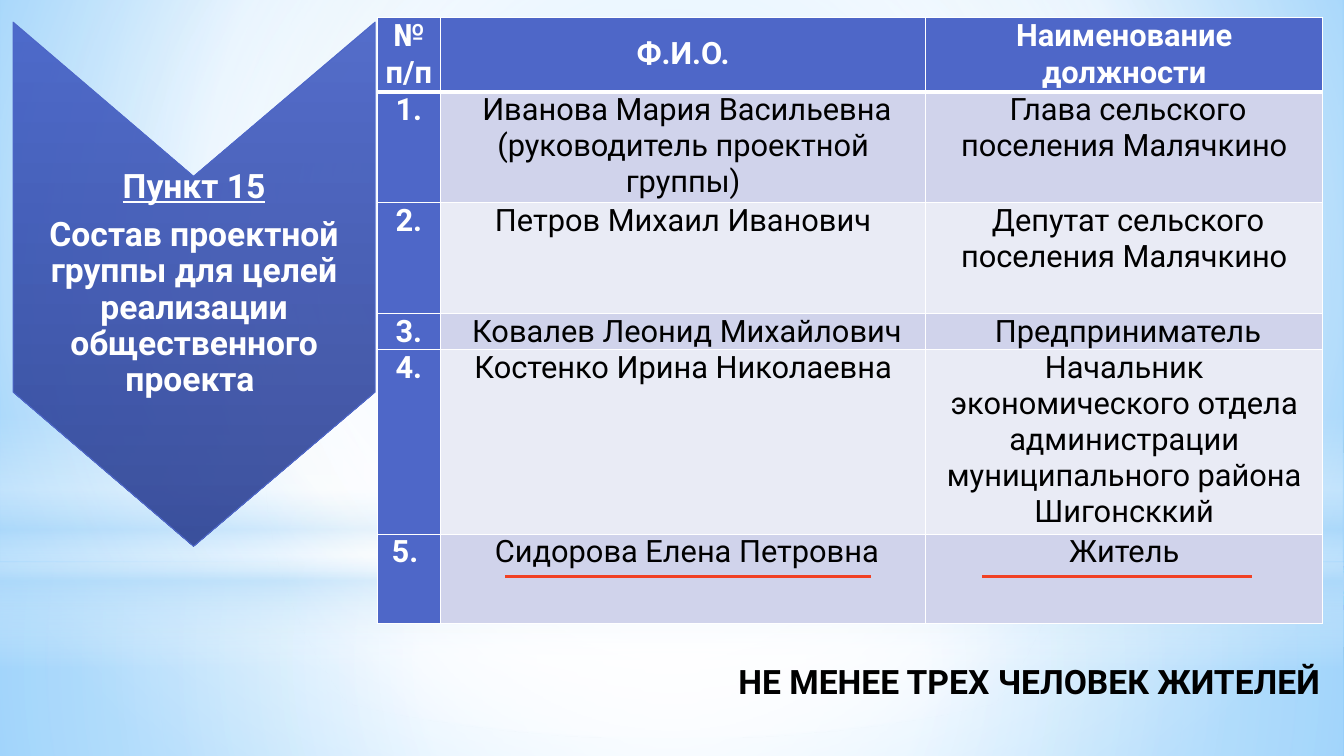
from lxml import etree
from pptx import Presentation
from pptx.dml.color import RGBColor
from pptx.enum.shapes import MSO_CONNECTOR as Connector, MSO_SHAPE as Shape
from pptx.enum.text import MSO_ANCHOR as Anchor, PP_ALIGN as Align
from pptx.oxml import parse_xml
from pptx.oxml.ns import nsdecls, qn
from pptx.util import Inches, Pt

WHITE, BLACK, BLUE = "FFFFFF", "000000", "4E67C8"
color = RGBColor.from_string


def set_gradient(fill, properties, stops, focus=None):
    fill.solid()
    stop_xml = "".join(
        f'<a:gs pos="{position * 1000}"><a:srgbClr val="{tint}">'
        f'<a:alpha val="{opacity * 1000}"/></a:srgbClr></a:gs>'
        for position, tint, opacity in stops)
    if focus:
        sides = " ".join(f'{side}="{inset * 1000}"' for side, inset in zip("ltrb", focus))
        direction = f'<a:path path="circle"><a:fillToRect {sides}/></a:path>'
    else:
        direction = '<a:lin ang="5400000" scaled="0"/>'
    gradient = parse_xml(f'<a:gradFill {nsdecls("a")} rotWithShape="1">'
                         f'<a:gsLst>{stop_xml}</a:gsLst>{direction}</a:gradFill>')
    properties.replace(properties.find(qn("a:solidFill")), gradient)


def style_text(paragraph, size, tint, bold, align):
    paragraph.alignment = align
    for run in paragraph.runs:
        run.font.name = "Roboto"
        run.font.size = Pt(size)
        run.font.bold = bold
        run.font.color.rgb = color(tint)


prs = Presentation()
prs.slide_width, prs.slide_height = Inches(13.33), Inches(7.5)
slide = prs.slides.add_slide(prs.slide_layouts[6])
shapes = slide.shapes

sky = slide.background.fill
sky.solid()
set_gradient(sky, slide.element.find(".//" + qn("p:bgPr")),
             [(0, "9ED5FF", 100), (60, WHITE, 100), (100, "5BB9FF", 100)], (20, 10, 20, 60))

CENTER = (50, 50, 50, 50)
PALE = "B4DCFA"
haze_layers = [
    (Shape.RECTANGLE, 5.58, 1.92, [(0, WHITE, 91), (37, WHITE, 76), (100, PALE, 79)], CENTER),
    (Shape.RECTANGLE, 0, 5.58, [(0, WHITE, 89), (48, WHITE, 62), (100, PALE, 79)], CENTER),
    (Shape.RECTANGLE, 4.12, 2.5, [(0, WHITE, 0), (29, WHITE, 30), (45, PALE, 40),
                                  (55, WHITE, 26), (65, PALE, 60), (100, WHITE, 0)], None),
    (Shape.OVAL, 1.75, 5.58, [(0, WHITE, 100), (56, WHITE, 0)], CENTER),
]
for outline, top, height, stops, focus in haze_layers:
    haze = shapes.add_shape(outline, 0, Inches(top), prs.slide_width, Inches(height))
    haze.shadow.inherit = False
    haze.line.fill.background()
    set_gradient(haze.fill, haze.element.spPr, stops, focus)

corners = [(3.72, 0.22), (3.72, 3.89), (1.92, 5.42), (0.13, 3.89), (0.13, 0.22), (1.92, 1.75)]
points = [(Inches(x), Inches(y)) for x, y in corners]
builder = shapes.build_freeform(*points[0])
builder.add_line_segments(points[1:], close=True)
chevron = builder.convert_to_shape()
chevron.shadow.inherit = False
set_gradient(chevron.fill, chevron.element.spPr, [(0, "435EC5", 90), (100, "2B4092", 90)])
chevron.line.color.rgb = color(BLUE)
chevron.line.width = Pt(0.75)
heading = chevron.text_frame
heading.word_wrap = True
heading.vertical_anchor = Anchor.MIDDLE
heading.margin_left = heading.margin_right = Inches(0.02)
heading.margin_top = heading.margin_bottom = Inches(1.82)
heading.text = "Пункт 15\nСостав проектной группы для целей реализации общественного проекта "
for paragraph in heading.paragraphs:
    style_text(paragraph, 24, WHITE, True, Align.CENTER)
    paragraph.line_spacing = 0.9
    paragraph.space_after = Pt(8.4)
heading.paragraphs[0].runs[0].font.underline = True

members = [
    ("№ п/п", "Ф.И.О.", "Наименование должности"),
    ("1.", " Иванова Мария Васильевна\n(руководитель проектной группы)",
     " Глава сельского поселения Малячкино"),
    ("2.", "Петров Михаил Иванович", " Депутат сельского поселения Малячкино"),
    ("3.", " Ковалев Леонид Михайлович", " Предприниматель"),
    ("4.", "Костенко Ирина Николаевна",
     "Начальник экономического отдела администрации муниципального района Шигонсккий"),
    (" 5.", " Сидорова Елена Петровна", "Житель"),
]
column_widths = [0.63, 4.81, 3.94]
row_heights = [0.74, 1.1, 1.1, 0.36, 1.83, 0.89]
team = shapes.add_table(len(members), 3, Inches(3.74), Inches(0.17),
                        Inches(9.38), Inches(6.02)).table
for column, width in zip(team.columns, column_widths):
    column.width = Inches(width)
for r, (texts, height) in enumerate(zip(members, row_heights)):
    team.rows[r].height = Inches(height)
    for c, text in enumerate(texts):
        cell = team.cell(r, c)
        is_label = r == 0 or c == 0
        cell.margin_left = cell.margin_right = Inches(0.07)
        cell.margin_top = cell.margin_bottom = 0
        cell.vertical_anchor = Anchor.MIDDLE if r == 0 else Anchor.TOP
        cell.text_frame.text = text
        align = Align.LEFT if text == " 5." else Align.CENTER
        for paragraph in cell.text_frame.paragraphs:
            style_text(paragraph, 22, WHITE if is_label else BLACK, is_label, align)
        cell.fill.solid()
        cell.fill.fore_color.rgb = color(BLUE if is_label else "D0D3EB" if r % 2 else "E9EBF5")
        header_edge = {0: "B", 1: "T"}.get(r)
        for index, side in enumerate("LRTB"):
            width = Pt(3 if side == header_edge else 1)
            cell._tc.tcPr.insert(index, parse_xml(
                f'<a:ln{side} {nsdecls("a")} w="{width}"><a:solidFill>'
                f'<a:srgbClr val="{WHITE}"/></a:solidFill></a:ln{side}>'))

for start, end in [(5.01, 8.64), (9.74, 12.42)]:
    underline = shapes.add_connector(Connector.STRAIGHT, Inches(start), Inches(5.72),
                                     Inches(end), Inches(5.72))
    underline.line.color.rgb = color("F14124")
    underline.line.width = Pt(2.25)
    etree.SubElement(underline.element.spPr, qn("a:effectLst"))

requirement = shapes.add_textbox(Inches(7.14), Inches(6.51), Inches(6.05), Inches(0.5)).text_frame
requirement.word_wrap = True
requirement.text = "НЕ МЕНЕЕ ТРЕХ ЧЕЛОВЕК ЖИТЕЛЕЙ"
style_text(requirement.paragraphs[0], 24, BLACK, True, Align.RIGHT)

prs.save("out.pptx")
